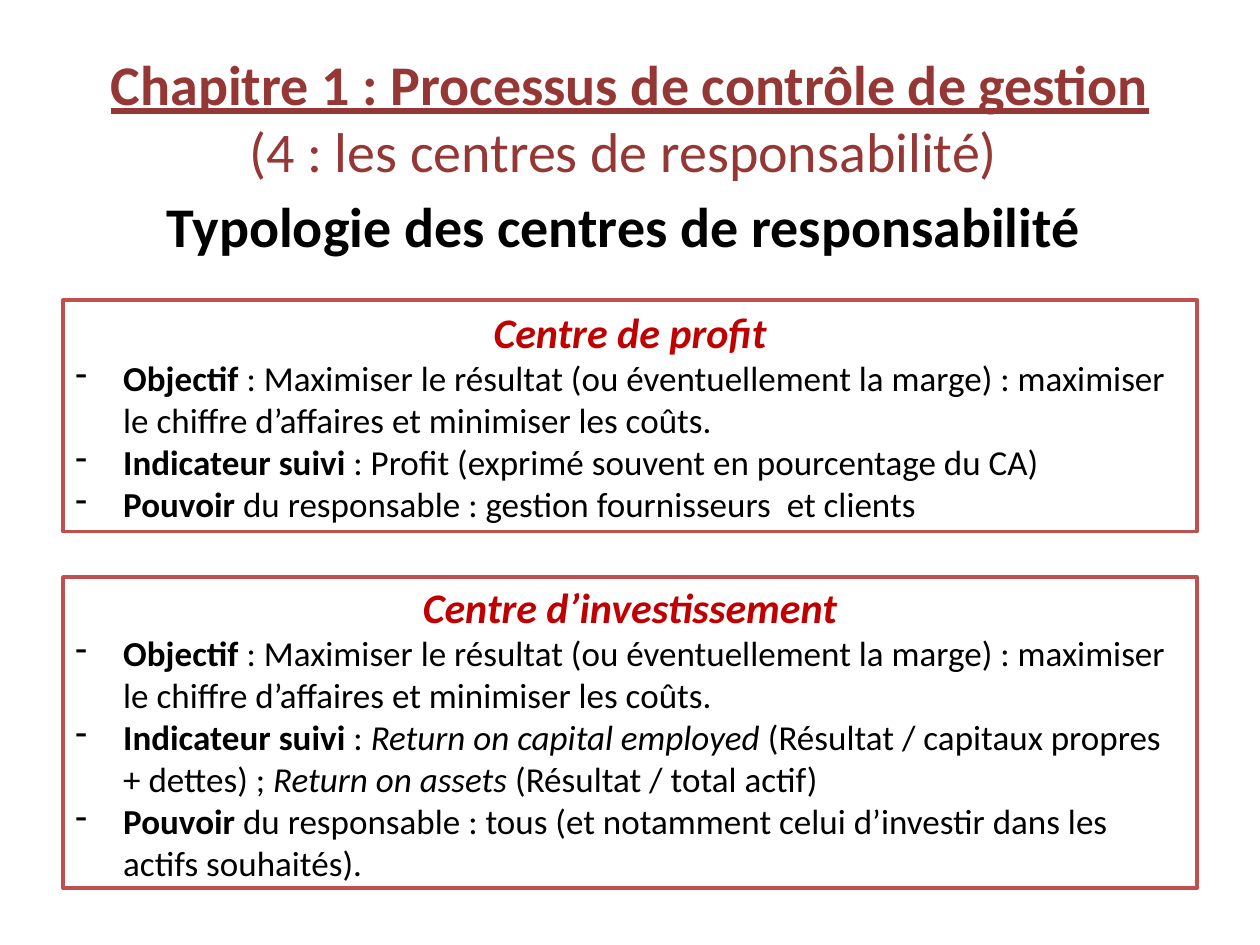
"""Build the slide on profit centres and investment centres."""
import dataclasses

import lxml.etree
import pptx
import pptx.dml.color
import pptx.enum.shapes
import pptx.enum.text
import pptx.oxml.ns
import pptx.util

ALIGN = pptx.enum.text.PP_ALIGN
ANCHOR = pptx.enum.text.MSO_ANCHOR


@dataclasses.dataclass(frozen=True)
class Theme:
    """Colours, type sizes and font of the slide."""
    font: str = "Calibri"
    title: str = "953735"
    heading: str = "C00000"
    text: str = "000000"
    fill: str = "FFFFFF"
    border: str = "C0504D"
    title_size: int = 32
    heading_size: int = 24
    text_size: int = 20
    border_width: int = 2
    indent: float = 0.38


THEME = Theme()
WIDTH, HEIGHT = 10, 7.5
LEFT, SPAN_WIDTH = 0.05, 0.9
PLAIN, BOLD, ITALIC = {}, {"bold": True}, {"italic": True}
GOAL = [
    ("Objectif", BOLD),
    (" : Maximiser le résultat (ou éventuellement la marge) : maximiser "
     "le chiffre d’affaires et minimiser les coûts.", PLAIN),
]
CENTRES = [
    (2.38, 1.84, "Centre de profit", [
        GOAL,
        [("Indicateur suivi ", BOLD),
         (": Profit (exprimé souvent en pourcentage du CA)", PLAIN)],
        [("Pouvoir", BOLD),
         (" du responsable : gestion fournisseurs  et clients", PLAIN)],
    ]),
    (4.58, 2.47, "Centre d’investissement", [
        GOAL,
        [("Indicateur suivi ", BOLD), (": ", PLAIN),
         ("Return on capital employed ", ITALIC),
         ("(Résultat / capitaux propres + dettes) ; ", PLAIN),
         ("Return on assets ", ITALIC),
         ("(Résultat / total actif)", PLAIN)],
        [("Pouvoir", BOLD),
         (" du responsable : tous (et notamment celui d’investir dans les "
          "actifs souhaités).", PLAIN)],
    ]),
]


def rgb(code):
    """Turn a hexadecimal code into a colour."""
    return pptx.dml.color.RGBColor.from_string(code)


def apply(target, values):
    """Set attributes from a dict of format values."""
    for name, value in values.items():
        setattr(target, name, value)


def place(box, top, height):
    """Put a box in the page's single column, from a top and height in inches."""
    apply(box, {
        "left": pptx.util.Inches(LEFT * WIDTH),
        "top": pptx.util.Inches(top),
        "width": pptx.util.Inches(SPAN_WIDTH * WIDTH),
        "height": pptx.util.Inches(height),
    })


def set_frame(box, anchor):
    """Wrap a box's text at fixed size and return its frame."""
    frame = box.text_frame
    apply(frame, {"word_wrap": True, "vertical_anchor": anchor,
                  "auto_size": pptx.enum.text.MSO_AUTO_SIZE.NONE})
    return frame


def write(para, spans, size, colour, align):
    """Fill a paragraph with styled spans."""
    para.alignment = align
    for text, style in spans:
        span = para.add_run()
        span.text = text
        apply(span.font, {"name": THEME.font, "size": pptx.util.Pt(size),
                          "bold": False, "italic": False, **style})
        span.font.color.rgb = rgb(colour)


def set_bullet(para, mark=None):
    """Give a paragraph a hanging bullet, or none without a mark."""
    props = para._p.get_or_add_pPr()
    indent = pptx.util.Inches(THEME.indent) if mark else 0
    props.set("marL", str(indent))
    props.set("indent", str(-indent))
    tag = "a:buChar" if mark else "a:buNone"
    bullet = lxml.etree.SubElement(props, pptx.oxml.ns.qn(tag))
    if mark:
        bullet.set("char", mark)


def add_title(page):
    """Write the chapter and its section in the title placeholder."""
    box = page.shapes.title
    place(box, 0.3, 1.25)
    frame = set_frame(box, ANCHOR.MIDDLE)
    lines = [
        ("Chapitre 1 : Processus de contrôle de gestion",
         {"bold": True, "underline": True}),
        ("(4 : les centres de responsabilité) ", PLAIN),
    ]
    for number, line in enumerate(lines):
        para = frame.add_paragraph() if number else frame.paragraphs[0]
        write(para, [line], THEME.title_size, THEME.title, ALIGN.CENTER)


def add_subject(page):
    """Write the subject in the body placeholder."""
    box = page.placeholders[1]
    place(box, 1.47, 4.95)
    para = set_frame(box, ANCHOR.TOP).paragraphs[0]
    write(para, [("Typologie des centres de responsabilité ", BOLD)],
          THEME.title_size, THEME.text, ALIGN.CENTER)
    set_bullet(para)


def add_centre(page, top, height, heading, items):
    """Add a framed box with a heading and a dashed list."""
    box = page.shapes.add_shape(
        pptx.enum.shapes.MSO_SHAPE.RECTANGLE, 0, 0, 0, 0)
    place(box, top, height)
    box.shadow.inherit = False
    box.fill.solid()
    box.fill.fore_color.rgb = rgb(THEME.fill)
    box.line.color.rgb = rgb(THEME.border)
    box.line.width = pptx.util.Pt(THEME.border_width)
    frame = set_frame(box, ANCHOR.MIDDLE)
    write(frame.paragraphs[0], [(heading, {**BOLD, **ITALIC})],
          THEME.heading_size, THEME.heading, ALIGN.CENTER)
    for item in items:
        para = frame.add_paragraph()
        write(para, item, THEME.text_size, THEME.text, ALIGN.LEFT)
        set_bullet(para, "-")


def main():
    """Build and save the deck."""
    deck = pptx.Presentation()
    apply(deck, {"slide_width": pptx.util.Inches(WIDTH),
                 "slide_height": pptx.util.Inches(HEIGHT)})
    page = deck.slides.add_slide(deck.slide_layouts[1])
    add_title(page)
    add_subject(page)
    for centre in CENTRES:
        add_centre(page, *centre)
    deck.save("out.pptx")


if __name__ == "__main__":
    main()
